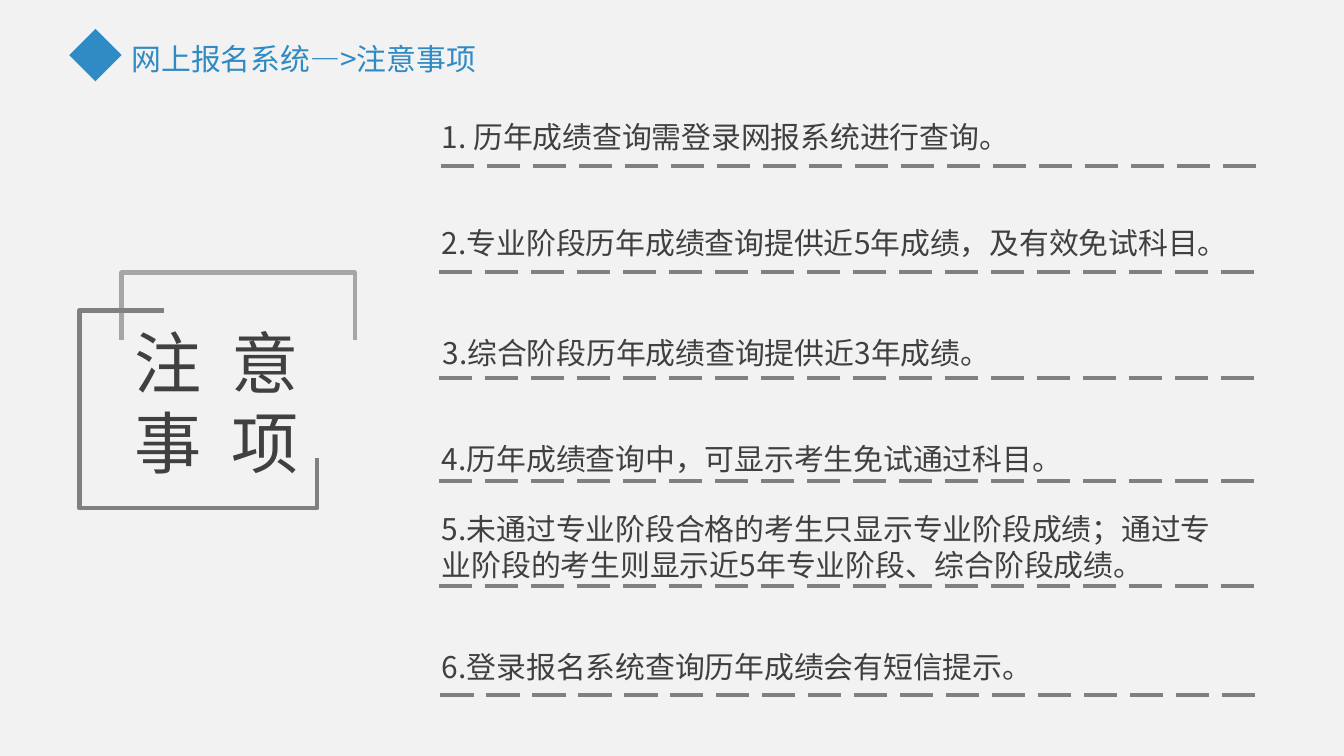
from dataclasses import dataclass

from lxml import etree
from pptx import Presentation
from pptx import util as u
from pptx.dml.color import RGBColor
from pptx.enum import dml, shapes, text
from pptx.oxml.ns import qn

FONT = "Noto Sans CJK SC"
BLUE, DARK, GREY, LIGHT, PAPER = "308BC4", "404040", "808080", "A6A6A6", "F2F2F2"

prs = Presentation()
prs.slide_width = u.Inches(10)
prs.slide_height = prs.slide_width * 9 // 16
COLUMNS = 100  # square grid cells across the slide


@dataclass
class Item:
    wording: str
    top: float
    rule: float
    left: float = 31.9
    right: float = 93.3
    height: float = 3.7


@dataclass
class Bracket:
    points: list[tuple[float, float]]
    colour: str


ITEMS = [
    Item("1. 历年成绩查询需登录网报系统进行查询。", 8.35, 12.35, right=93.45),
    Item("2.专业阶段历年成绩查询提供近5年成绩，及有效免试科目。", 16.2, 20.25),
    Item("3.综合阶段历年成绩查询提供近3年成绩。", 24.4, 28.1, left=31.95),
    Item("4.历年成绩查询中，可显示考生免试通过科目。", 32.3, 35.8),
    Item("5.未通过专业阶段合格的考生只显示专业阶段成绩；"
         "通过专业阶段的考生则显示近5年专业阶段、综合阶段成绩。", 37.5, 43.6, height=6.4),
    Item("6.登录报名系统查询历年成绩会有短信提示。", 47.8, 51.7, right=93.4),
]
BRACKETS = [
    Bracket([(9.05, 25.3), (9.05, 20.3), (26.4, 20.3), (26.4, 25.3)], LIGHT),
    Bracket([(23.6, 34.1), (23.6, 37.8), (5.9, 37.8), (5.9, 23.1), (12.2, 23.1)], GREY),
]


def cells(n: float) -> u.Emu:
    return u.Emu(round(n * prs.slide_width / COLUMNS))


def rgb(value: str) -> RGBColor:
    return RGBColor.from_string(value)


def place(sp, left: float, top: float, width: float, height: float) -> None:
    sp.left, sp.top, sp.width, sp.height = map(cells, (left, top, width, height))


def write(sp, wording: str, size: float, colour: str,
          inset: tuple[float, float] = (1, 0.5), spacing: float = 0) -> None:
    """Fill a text shape; spacing is extra points after each character."""
    tf = sp.text_frame
    tf.text = wording
    tf.word_wrap = True
    tf.auto_size = text.MSO_AUTO_SIZE.NONE
    tf.vertical_anchor = text.MSO_ANCHOR.TOP
    tf.margin_left = tf.margin_right = cells(inset[0])
    tf.margin_top = tf.margin_bottom = cells(inset[1])
    for p in tf.paragraphs:
        p.alignment = text.PP_ALIGN.LEFT
        p.line_spacing = 1.0
        p.space_before = u.Pt(0)
        for r in p.runs:
            r.font.size, r.font.name = u.Pt(size), FONT
            r.font.color.rgb = rgb(colour)
            props = r.font._element
            etree.SubElement(props, qn("a:ea")).set("typeface", FONT)
            if spacing:
                props.set("spc", str(round(spacing * 100)))


def add_text(slide, left: float, top: float, width: float, height: float):
    return slide.shapes.add_textbox(*map(cells, (left, top, width, height)))


def draw_bracket(slide, bracket: Bracket) -> None:
    start, *rest = [(cells(x), cells(y)) for x, y in bracket.points]
    builder = slide.shapes.build_freeform(*start)
    builder.add_line_segments(rest, close=False)
    sp = builder.convert_to_shape()
    sp.shadow.inherit = False
    sp.fill.background()
    sp.line.color.rgb = rgb(bracket.colour)
    sp.line.width = u.Pt(2.5)


def draw_item(slide, item: Item) -> None:
    y = cells(item.rule)
    rule = slide.shapes.add_connector(
        shapes.MSO_CONNECTOR.STRAIGHT,
        cells(item.right), y, cells(item.right - 61.4), y)
    rule.line.color.rgb = rgb(GREY)
    rule.line.width = u.Pt(2.25)
    rule.line.dash_style = dml.MSO_LINE.LONG_DASH
    etree.SubElement(rule._element.spPr, qn("a:effectLst"))
    box = add_text(slide, item.left, item.top, 61.4, item.height)
    write(box, item.wording, 16, DARK)


def main() -> None:
    slide = prs.slides.add_slide(prs.slide_layouts[5])
    slide.background.fill.solid()
    slide.background.fill.fore_color.rgb = rgb(PAPER)

    title = slide.shapes.title
    place(title, 9.1, 2.65, 29.1, 3.4)
    write(title, "网上报名系统—>注意事项", 16, BLUE, inset=(0.7, 0.4))

    diamond = slide.shapes.add_shape(
        shapes.MSO_SHAPE.DIAMOND, *map(cells, (5.15, 2.15, 3.9, 3.9)))
    diamond.shadow.inherit = False
    diamond.fill.solid()
    diamond.fill.fore_color.rgb = rgb(BLUE)
    diamond.line.fill.background()

    heading = add_text(slide, 9.05, 23.4, 15.6, 13.1)
    write(heading, "注 意\n事 项", 36, DARK, spacing=4)

    for bracket in BRACKETS:
        draw_bracket(slide, bracket)
    for item in ITEMS:
        draw_item(slide, item)
    prs.save("out.pptx")


if __name__ == "__main__":
    main()
